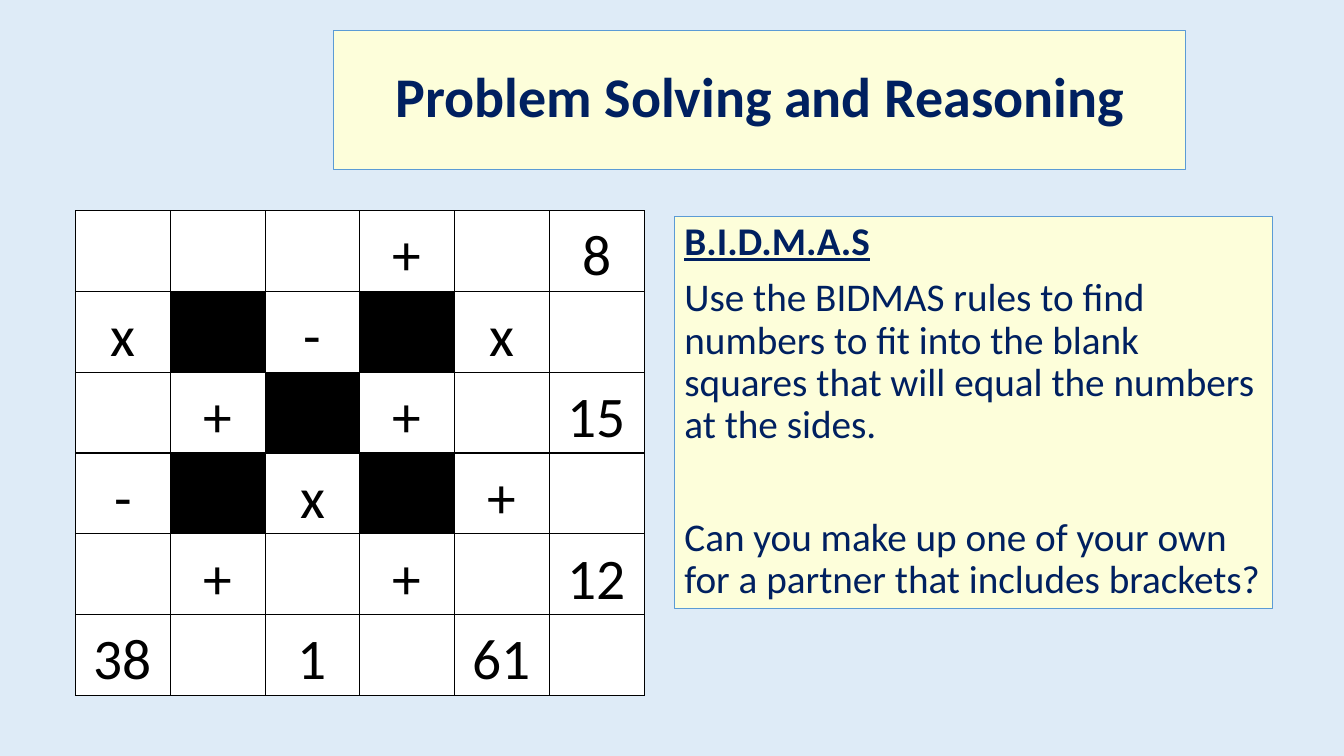
from dataclasses import dataclass

from lxml.etree import SubElement
from pptx import Presentation
from pptx.dml.color import RGBColor as RGB
from pptx.enum.shapes import MSO_SHAPE as Shape
from pptx.enum.text import MSO_ANCHOR as Anchor, PP_ALIGN as Align
from pptx.oxml.ns import qn
from pptx.util import Inches, Pt


@dataclass(frozen=True)
class Theme:
    font: str = "Calibri"
    back: str = "DEEBF7"
    panel: str = "FDFEDA"
    edge: str = "5B9BD5"
    navy: str = "002060"
    black: str = "000000"
    white: str = "FFFFFF"
    title: int = 40
    body: int = 28
    grid: int = 41


THEME = Theme()

# "#" marks a blocked square, "." an empty one
PUZZLE = [
    ". . . + . 8",
    "x # - # x .",
    ". + # + . 15",
    "- # x # + .",
    ". + . + . 12",
    "38 . 1 . 61 .",
]

RULES = ("Use the BIDMAS rules to find numbers to fit into the blank "
         "squares that will equal the numbers at the sides.")
TASK = ("Can you make up one of your own for a partner that "
        "includes brackets?")


def paint(fill, color):
    fill.solid()
    fill.fore_color.rgb = RGB.from_string(color)


def add_run(para, text, size, color, bold=False, under=False):
    run = para.add_run()
    run.text = text
    font = run.font
    font.name, font.size = THEME.font, Pt(size)
    font.bold, font.underline = bold, under
    font.color.rgb = RGB.from_string(color)


def add_panel(slide, left, top, width, height, anchor):
    """Add a bordered box and return its text frame."""
    box = slide.shapes.add_shape(Shape.RECTANGLE, Inches(left), Inches(top),
                                 Inches(width), Inches(height))
    box.shadow.inherit = False
    paint(box.fill, THEME.panel)
    paint(box.line.fill, THEME.edge)
    box.line.width = Pt(0.75)
    frame = box.text_frame
    frame.word_wrap = True
    frame.vertical_anchor = anchor
    return frame


def add_title(slide):
    frame = add_panel(slide, 3.31, 0.3, 8.45, 1.38, Anchor.MIDDLE)
    para = frame.paragraphs[0]
    para.alignment = Align.CENTER
    para.line_spacing = 0.9
    add_run(para, "Problem Solving and Reasoning", THEME.title, THEME.navy,
            bold=True)


def add_rules(slide):
    frame = add_panel(slide, 6.69, 2.15, 5.93, 3.89, Anchor.TOP)
    parts = [("B.I.D.M.A.S", 0, True), (RULES, 10, False), (TASK, 50, False)]
    for i, (text, gap, head) in enumerate(parts):
        para = frame.add_paragraph() if i else frame.paragraphs[0]
        para.alignment = Align.LEFT
        para.line_spacing = 0.9
        para.space_before = Pt(gap)
        add_run(para, text, THEME.body, THEME.navy, bold=head, under=head)


def add_border(cell):
    props = cell._tc.get_or_add_tcPr()
    for i, side in enumerate(("lnL", "lnR", "lnT", "lnB")):
        line = props.makeelement(qn("a:" + side), {"w": str(Pt(1))})
        fill = SubElement(line, qn("a:solidFill"))
        SubElement(fill, qn("a:srgbClr"), val=THEME.black)
        props.insert(i, line)


def fill_cell(cell, mark):
    paint(cell.fill, THEME.black if mark == "#" else THEME.white)
    add_border(cell)
    cell.margin_left = cell.margin_right = Inches(0.08)
    cell.margin_top = cell.margin_bottom = 0
    if mark not in "#.":
        para = cell.text_frame.paragraphs[0]
        para.alignment = Align.CENTER
        para.line_spacing = 1.15
        add_run(para, mark, THEME.grid, THEME.black)


def add_puzzle(slide):
    rows = [line.split() for line in PUZZLE]
    count = len(rows)
    table = slide.shapes.add_table(count, count, Inches(0.75), Inches(2.09),
                                   Inches(5.64), Inches(4.67)).table
    table.first_row = table.horz_banding = False
    for r, row in enumerate(rows):
        for c, mark in enumerate(row):
            fill_cell(table.cell(r, c), mark)


def main():
    deck = Presentation()
    deck.slide_width, deck.slide_height = Inches(13.33), Inches(7.5)
    slide = deck.slides.add_slide(deck.slide_layouts[6])
    paint(slide.background.fill, THEME.back)
    add_title(slide)
    add_puzzle(slide)
    add_rules(slide)
    deck.save("out.pptx")


if __name__ == "__main__":
    main()
